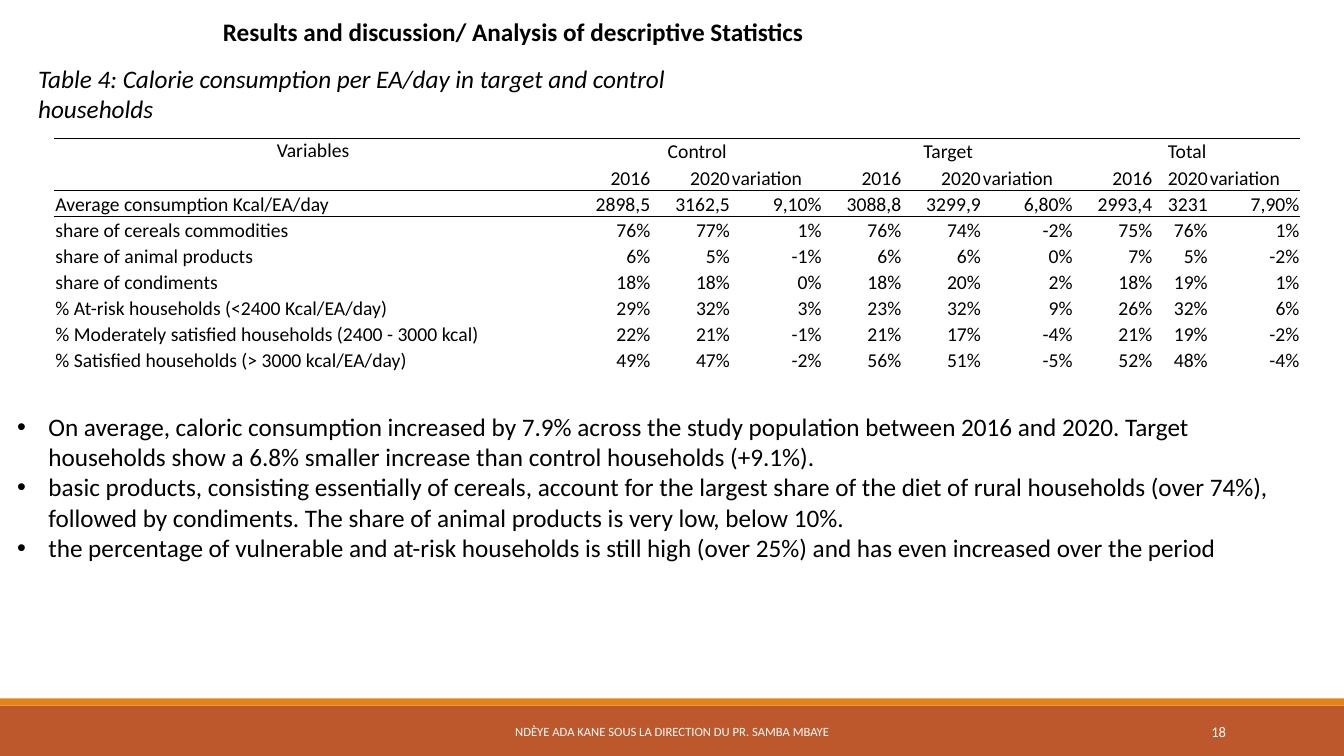
import dataclasses

import lxml.etree
import pptx
import pptx.dml.color
import pptx.enum.shapes
import pptx.enum.text
import pptx.oxml.ns
import pptx.util

Inches = pptx.util.Inches
ALIGN = pptx.enum.text.PP_ALIGN
ANCHOR = pptx.enum.text.MSO_ANCHOR


@dataclasses.dataclass(frozen=True)
class Theme:
    font: str = "Calibri"
    text: str = "000000"
    paper: str = "FFFFFF"
    band: str = "BD582C"
    stripe: str = "E48312"
    body_size: float = 18
    table_size: float = 14
    footer_size: float = 9
    number_size: float = 10.5
    rule_width: float = 0.5


THEME = Theme()

PERIODS = ["2016", "2020", "variation"]
GROUPS = [" Control ", "Target", "Total"]
MEASURES = [
    ("Average consumption Kcal/EA/day",
     "2898,5 3162,5 9,10% 3088,8 3299,9 6,80% 2993,4 3231 7,90%"),
    ("share of cereals commodities", "76% 77% 1% 76% 74% -2% 75% 76% 1%"),
    ("share of animal products", "6% 5% -1% 6% 6% 0% 7% 5% -2%"),
    ("share of condiments", "18% 18% 0% 18% 20% 2% 18% 19% 1%"),
    ("% At-risk households (<2400 Kcal/EA/day)", "29% 32% 3% 23% 32% 9% 26% 32% 6%"),
    ("% Moderately satisfied households (2400 - 3000 kcal)",
     "22% 21% -1% 21% 17% -4% 21% 19% -2%"),
    ("% Satisfied households (> 3000 kcal/EA/day)",
     "49% 47% -2% 56% 51% -5% 52% 48% -4%"),
]
COLUMN_WIDTHS = [5.13, 0.79, 0.79, 0.91, 0.79, 0.79, 0.91, 0.79, 0.55, 0.91]
FINDINGS = [
    "On average, caloric consumption increased by 7.9% across the study population "
    "between 2016 and 2020. Target households show a 6.8% smaller increase than "
    "control households (+9.1%).",
    "basic products, consisting essentially of cereals, account for the largest share "
    "of the diet of rural households (over 74%), followed by condiments. The share of "
    "animal products is very low, below 10%.",
    "the percentage of vulnerable and at-risk households is still high (over 25%) and "
    "has even increased over the period",
]


def rgb(value):
    return pptx.dml.color.RGBColor.from_string(value)


def write_text(frame, lines, size=THEME.body_size, color=THEME.text, bold=False,
               italic=False, align=ALIGN.LEFT):
    for index, line in enumerate(lines):
        paragraph = frame.paragraphs[0] if index == 0 else frame.add_paragraph()
        paragraph.alignment = align
        paragraph.space_before = pptx.util.Pt(0)
        run = paragraph.add_run()
        run.text = line
        run.font.name = THEME.font
        run.font.size = pptx.util.Pt(size)
        run.font.color.rgb = rgb(color)
        run.font.bold = bold
        run.font.italic = italic


def place(shape, box, anchor=ANCHOR.TOP):
    shape.left, shape.top, shape.width, shape.height = map(Inches, box)
    frame = shape.text_frame
    frame.word_wrap = True
    frame.auto_size = pptx.enum.text.MSO_AUTO_SIZE.NONE
    frame.vertical_anchor = anchor
    return frame


def add_label(slide, box, text, anchor=ANCHOR.TOP, **text_format):
    label = slide.shapes.add_textbox(*map(Inches, box))
    write_text(place(label, box, anchor), [text], **text_format)


def add_bar(slide, box, color):
    bar = slide.shapes.add_shape(pptx.enum.shapes.MSO_SHAPE.RECTANGLE, *map(Inches, box))
    bar.shadow.inherit = False
    bar.fill.solid()
    bar.fill.fore_color.rgb = rgb(color)
    bar.line.fill.background()


def add_footer(slide, box):
    left, top, width, height = box
    stripe_height = 0.07
    band_top = top + stripe_height
    add_bar(slide, (left, band_top, width, height - stripe_height), THEME.band)
    add_bar(slide, (left, top, width, stripe_height), THEME.stripe)
    add_label(slide, (left + 4.03, band_top + 0.06, 5.27, 0.4),
              "NDÈYE ADA KANE SOUS LA DIRECTION DU PR. SAMBA MBAYE", ANCHOR.MIDDLE,
              size=THEME.footer_size, color=THEME.paper, align=ALIGN.CENTER)
    add_label(slide, (left + 10.83, band_top + 0.06, 1.43, 0.4), "18", ANCHOR.MIDDLE,
              size=THEME.number_size, color=THEME.paper, align=ALIGN.RIGHT)


def draw_rules(cell, edges):
    properties = cell._tc.get_or_add_tcPr()
    for position, edge in enumerate(edges):
        line = lxml.etree.Element(pptx.oxml.ns.qn(f"a:ln{edge}"),
                                  w=str(pptx.util.Pt(THEME.rule_width)))
        fill = lxml.etree.SubElement(line, pptx.oxml.ns.qn("a:solidFill"))
        lxml.etree.SubElement(fill, pptx.oxml.ns.qn("a:srgbClr"), val=THEME.text)
        properties.insert(position, line)


def fill_cell(cell, text, align, anchor=ANCHOR.BOTTOM, edges=""):
    cell.margin_left = cell.margin_right = cell.margin_top = Inches(0.01)
    cell.margin_bottom = 0
    cell.vertical_anchor = anchor
    cell.fill.solid()
    cell.fill.fore_color.rgb = rgb(THEME.paper)
    if text:
        write_text(cell.text_frame, [text], size=THEME.table_size, align=align)
    draw_rules(cell, edges)


def add_calorie_table(slide, box):
    rows = [[""] + PERIODS * len(GROUPS)]
    rows += [[name] + values.split() for name, values in MEASURES]
    frame = slide.shapes.add_table(len(rows) + 1, len(COLUMN_WIDTHS), *map(Inches, box))
    table = frame.table
    table.first_row = table.horz_banding = False
    for style in frame.element.iter(pptx.oxml.ns.qn("a:tableStyleId")):
        style.text = "{2D5ABB26-0587-4C30-8999-92F81FD0307C}"
    for column, width in zip(table.columns, COLUMN_WIDTHS):
        column.width = Inches(width)
    for row in table.rows:
        row.height = Inches(box[3] / len(table.rows))

    table.cell(0, 0).merge(table.cell(1, 0))
    fill_cell(table.cell(0, 0), "Variables", ALIGN.CENTER, ANCHOR.TOP, "TB")
    for column_index in range(1, len(COLUMN_WIDTHS)):
        group_index, offset = divmod(column_index - 1, len(PERIODS))
        cell = table.cell(0, column_index)
        if offset == 0:
            cell.merge(table.cell(0, column_index + len(PERIODS) - 1))
        fill_cell(cell, GROUPS[group_index] if offset == 0 else "", ALIGN.CENTER, edges="T")

    for row_index, values in enumerate(rows, start=1):
        for column_index, value in enumerate(values):
            is_left = column_index == 0 or value == PERIODS[-1]
            fill_cell(table.cell(row_index, column_index), value,
                      ALIGN.LEFT if is_left else ALIGN.RIGHT,
                      edges={1: "B", 2: "T"}.get(row_index, ""))


def add_findings(placeholder, box):
    write_text(place(placeholder, box), FINDINGS)
    for paragraph in placeholder.text_frame.paragraphs:
        properties = paragraph._p.get_or_add_pPr()
        properties.set("marL", str(Inches(0.31)))
        properties.set("indent", str(-Inches(0.31)))
        font = lxml.etree.SubElement(properties, pptx.oxml.ns.qn("a:buFont"))
        font.set("typeface", "Arial")
        lxml.etree.SubElement(properties, pptx.oxml.ns.qn("a:buChar"), char="•")


def build_results_slide(presentation):
    slide = presentation.slides.add_slide(presentation.slide_layouts[1])
    for placeholder in list(slide.placeholders):
        if placeholder.placeholder_format.idx > 1:
            placeholder.element.getparent().remove(placeholder.element)
    add_footer(slide, (0, 6.93, 13.33, 0.57))
    write_text(place(slide.shapes.title, (2.11, 0.11, 7.05, 0.4)),
               ["Results and discussion/ Analysis of descriptive Statistics"], bold=True)
    add_label(slide, (0.28, 0.58, 6.8, 0.71),
              "Table 4: Calorie consumption per EA/day in target and control households",
              italic=True)
    add_calorie_table(slide, (0.54, 1.37, 12.36, 2.33))
    add_findings(slide.placeholders[1], (0.07, 4.03, 12.83, 1.62))


def main():
    presentation = pptx.Presentation()
    presentation.slide_width = Inches(13.33)
    presentation.slide_height = Inches(7.5)
    build_results_slide(presentation)
    presentation.save("out.pptx")


if __name__ == "__main__":
    main()
